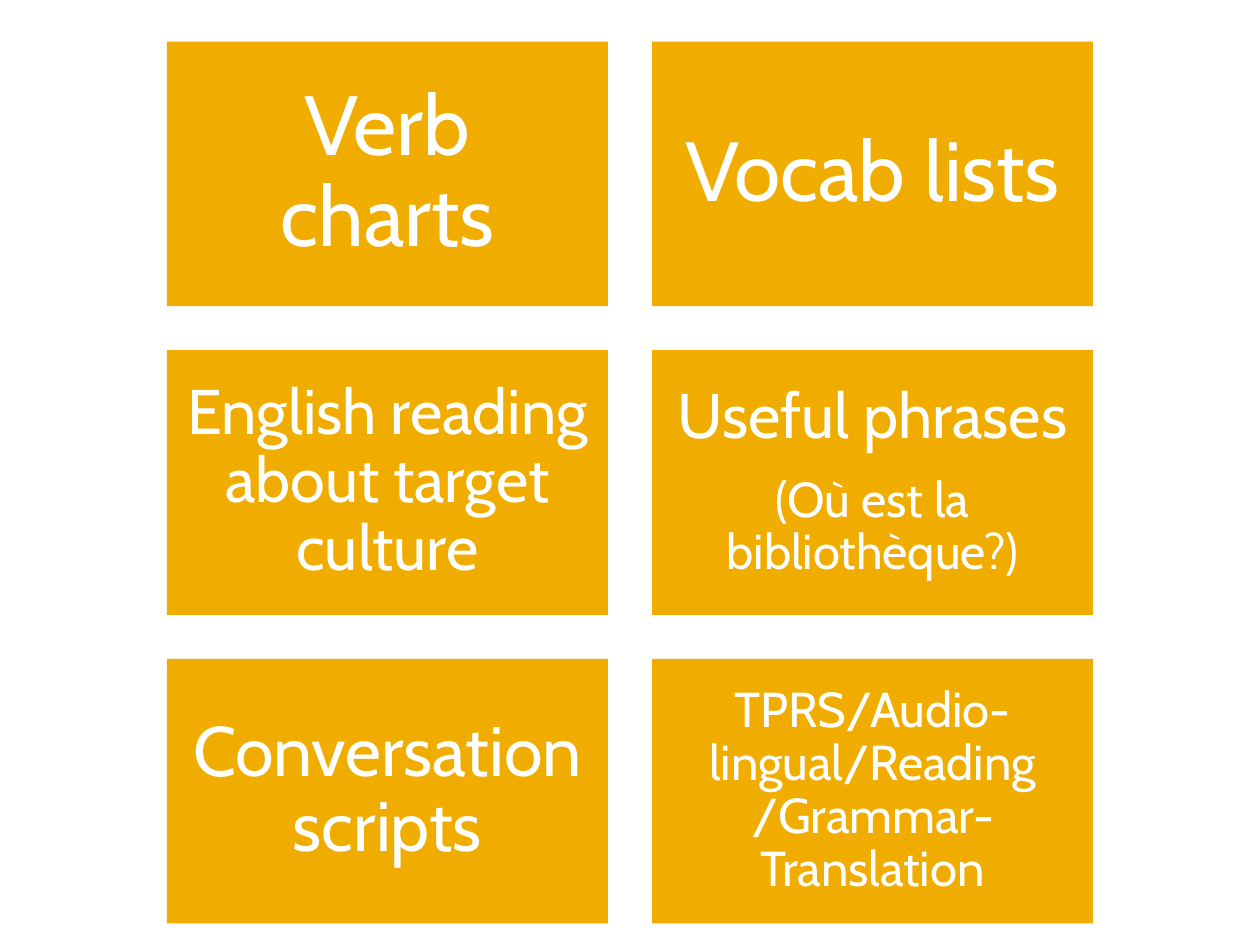
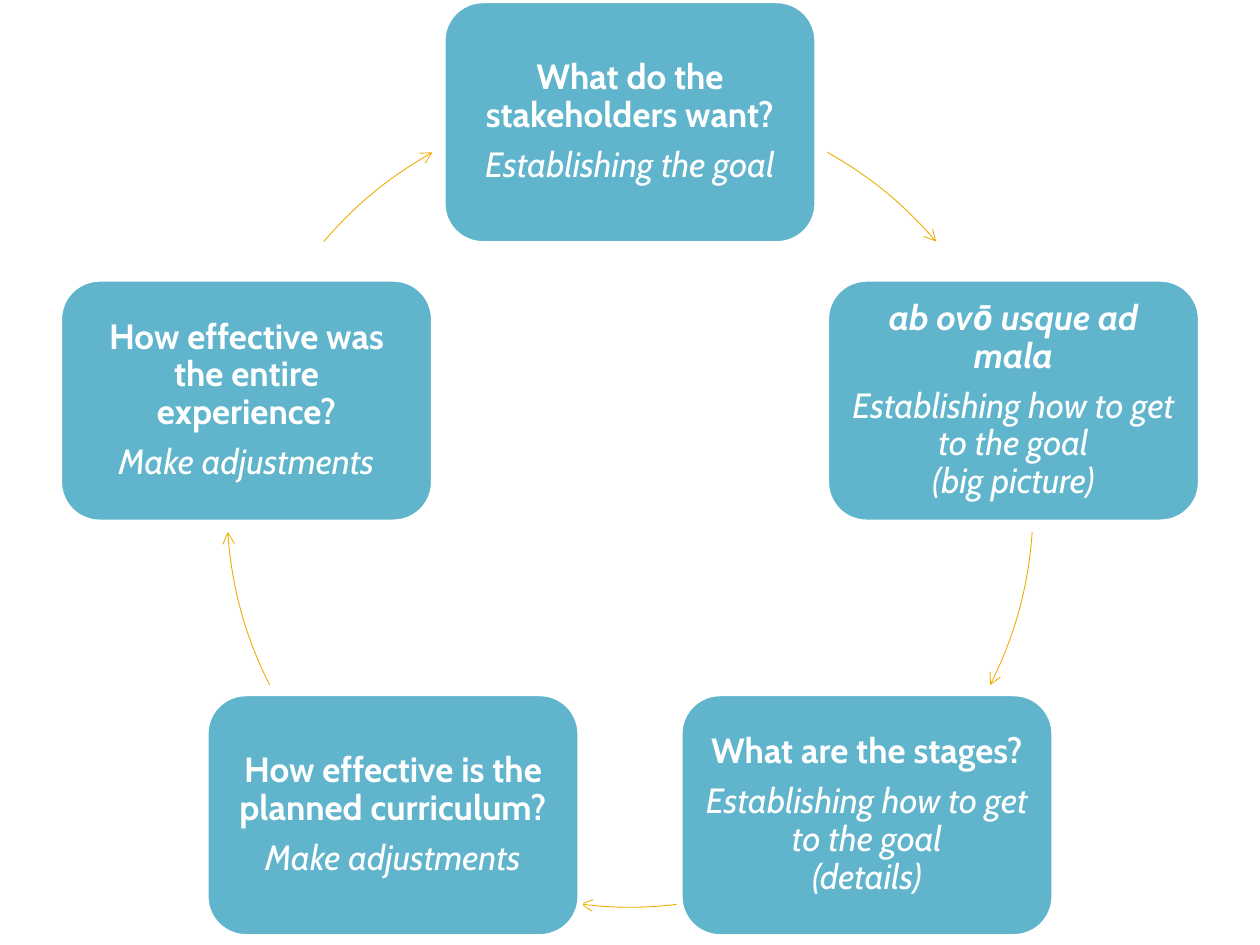
"""Build two slides: a grid of classroom resources and a curriculum planning cycle."""
import math

import pptx
import pptx.dml.color
import pptx.enum.shapes
import pptx.enum.text
import pptx.oxml.ns
import pptx.util
from lxml import etree

SLIDE_WIDTH, SLIDE_HEIGHT = 10, 7.5
FONT = "Cabin"
GOLD, BLUE, WHITE = "F0AD00", "60B5CC", "FFFFFF"

RESOURCES = [
    [("Verb charts", 48)],
    [("Vocab lists", 48)],
    [("English reading about target culture", 36)],
    [("Useful phrases", 36), ("(Où est la bibliothèque?)", 28)],
    [("Conversation scripts", 40)],
    [("TPRS/Audio-lingual/Reading /Grammar-Translation", 28)],
]
COLUMNS = 2
CARD_WIDTH, CARD_HEIGHT, CARD_GAP = 3.5, 2.1, 0.35
GRID_LEFT = (SLIDE_WIDTH - COLUMNS * CARD_WIDTH - CARD_GAP) / 2
GRID_TOP = 0.33

STAGES = [
    ("What do the stakeholders want?", "Establishing the goal", False, 0),
    ("ab ovō usque ad mala", "Establishing how to get to the goal\n(big picture)", True, 2.21),
    ("What are the stages?", "Establishing how to get to the goal\n(details)", False, 5.5),
    ("How effective is the planned curriculum?", "Make adjustments", False, 5.5),
    ("How effective was the entire experience?", "Make adjustments", False, 2.21),
]
STAGE_WIDTH, STAGE_HEIGHT, STAGE_SIZE = 2.98, 1.94, 20
CENTER_X, CENTER_Y, RADIUS = SLIDE_WIDTH / 2, 4, 3.2
ARROW_ANGLES = [(29.3, 49.4), (94, 116.7), (173, 187), (243.3, 266), (310.6, 330.7)]


def color(value):
    return pptx.dml.color.RGBColor.from_string(value)


def add_box(slide, kind, left, top, width, height, fill, margin, lines):
    """Add a filled shape; each line is (text, size, bold, italic)."""
    shape = slide.shapes.add_shape(
        kind, *(pptx.util.Inches(length) for length in (left, top, width, height)))
    shape.shadow.inherit = False
    shape.fill.solid()
    shape.fill.fore_color.rgb = color(fill)
    shape.line.fill.background()
    frame = shape.text_frame
    frame.word_wrap = True
    frame.vertical_anchor = pptx.enum.text.MSO_ANCHOR.MIDDLE
    frame.margin_left = frame.margin_right = pptx.util.Inches(margin)
    frame.margin_top = frame.margin_bottom = pptx.util.Inches(margin)
    for index, (text, size, bold, italic) in enumerate(lines):
        paragraph = frame.add_paragraph() if index else frame.paragraphs[0]
        paragraph.text = text
        paragraph.alignment = pptx.enum.text.PP_ALIGN.CENTER
        paragraph.line_spacing = 0.9
        paragraph.space_after = pptx.util.Pt(0.35 * size)
        font = paragraph.font
        font.name, font.size = FONT, pptx.util.Pt(size)
        font.bold, font.italic = bold, italic
        font.color.rgb = color(WHITE)
    return shape


def arc_points(start, end):
    """Give the four Bezier points of an arc, inside the square around the circle."""
    first, last = math.radians(start), math.radians(end)
    reach = 4 / 3 * math.tan((last - first) / 4)
    points = [(math.sin(angle) + pull * math.cos(angle),
               -math.cos(angle) + pull * math.sin(angle))
              for angle, pull in ((first, 0), (first, reach), (last, -reach), (last, 0))]
    return [(pptx.util.Inches(RADIUS * (1 + x)), pptx.util.Inches(RADIUS * (1 + y)))
            for x, y in points]


def add_arc_arrow(slide, start, end):
    """Draw an open arc of the cycle, clockwise, with an arrowhead at its end."""
    qualified = pptx.oxml.ns.qn
    points = arc_points(start, end)
    builder = slide.shapes.build_freeform(*points[0])
    builder.add_line_segments(points[1:], close=False)
    arrow = builder.convert_to_shape()
    arrow.left = pptx.util.Inches(CENTER_X - RADIUS)
    arrow.top = pptx.util.Inches(CENTER_Y - RADIUS)
    arrow.width = arrow.height = pptx.util.Inches(2 * RADIUS)
    arrow.shadow.inherit = False
    arrow.fill.background()
    arrow.line.color.rgb = color(GOLD)
    arrow.line.width = pptx.util.Pt(0.5)

    properties = arrow.element.spPr
    outline = next(properties.iter(qualified("a:path")))
    for segment in list(outline):
        outline.remove(segment)
    outline.set("w", str(arrow.width))
    outline.set("h", str(arrow.height))
    for tag, stops in (("a:moveTo", points[:1]), ("a:cubicBezTo", points[1:])):
        segment = etree.SubElement(outline, qualified(tag))
        for x, y in stops:
            etree.SubElement(segment, qualified("a:pt"), x=str(x), y=str(y))
    etree.SubElement(properties.find(qualified("a:ln")), qualified("a:tailEnd"), type="arrow")


def add_resource_grid(slide):
    for index, lines in enumerate(RESOURCES):
        row, column = divmod(index, COLUMNS)
        add_box(slide, pptx.enum.shapes.MSO_SHAPE.RECTANGLE,
                GRID_LEFT + column * (CARD_WIDTH + CARD_GAP),
                GRID_TOP + row * (CARD_HEIGHT + CARD_GAP),
                CARD_WIDTH, CARD_HEIGHT, GOLD, lines[0][1] / 240,
                [(text, size, False, False) for text, size in lines])


def add_planning_cycle(slide):
    for start, end in ARROW_ANGLES:
        add_arc_arrow(slide, start, end)
    for index, (question, action, italic, top) in enumerate(STAGES):
        angle = math.radians(index * 360 / len(STAGES))
        left = CENTER_X + RADIUS * math.sin(angle) - STAGE_WIDTH / 2
        stage = add_box(slide, pptx.enum.shapes.MSO_SHAPE.ROUNDED_RECTANGLE,
                        left, top, STAGE_WIDTH, STAGE_HEIGHT, BLUE, 0.08,
                        [(question, STAGE_SIZE, True, italic),
                         (action, STAGE_SIZE, False, True)])
        stage.line.color.rgb = color(WHITE)
        stage.line.width = pptx.util.Pt(3.78)


def main():
    presentation = pptx.Presentation()
    presentation.slide_width = pptx.util.Inches(SLIDE_WIDTH)
    presentation.slide_height = pptx.util.Inches(SLIDE_HEIGHT)
    blank = presentation.slide_layouts[6]
    for fill_slide in (add_resource_grid, add_planning_cycle):
        fill_slide(presentation.slides.add_slide(blank))
    presentation.save("out.pptx")


if __name__ == "__main__":
    main()
